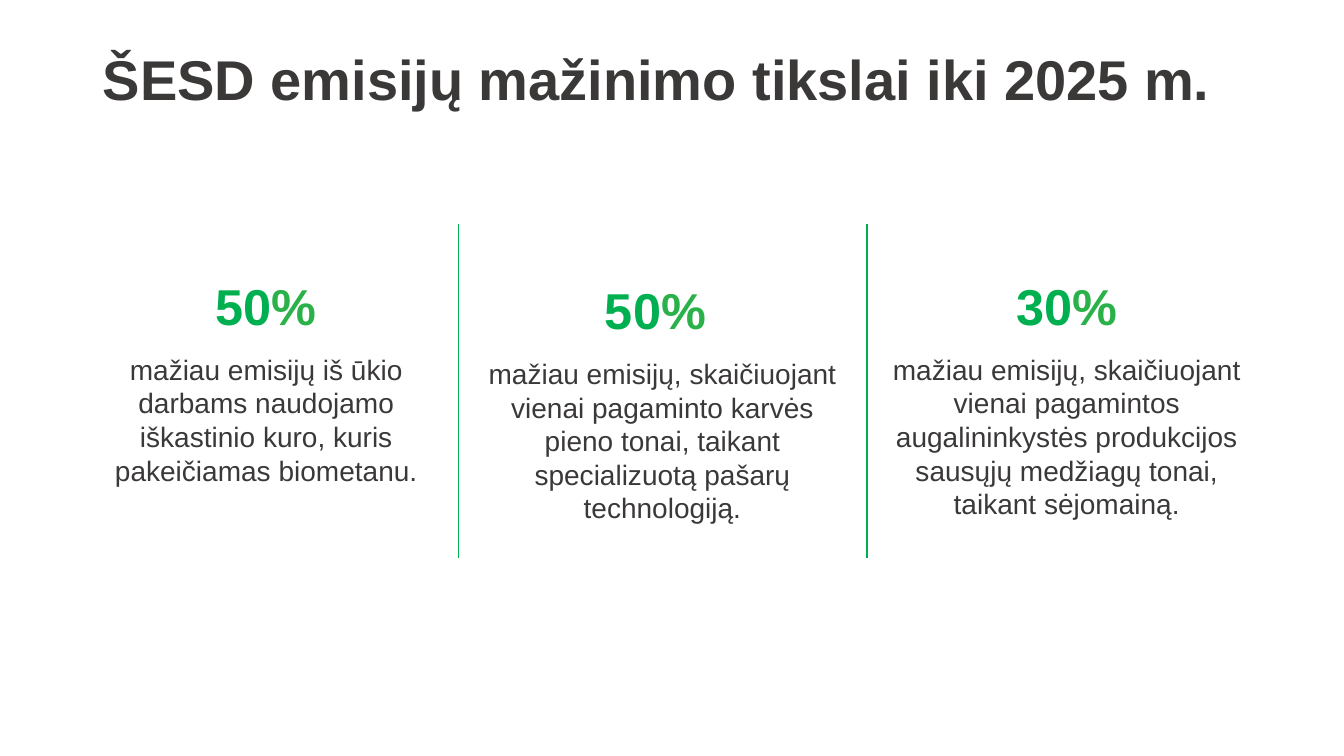
from lxml.etree import SubElement
from pptx import Presentation
from pptx.dml.color import RGBColor
from pptx.enum.shapes import MSO_CONNECTOR as Connector
from pptx.enum.text import MSO_ANCHOR as Anchor, MSO_AUTO_SIZE as AutoSize, PP_ALIGN as Align
from pptx.oxml.ns import qn
from pptx.util import Inches, Pt

WIDTH, HEIGHT = Inches(13.33), Inches(7.5)
INK, GREEN, PERCENT_GREEN = "3B3838", "00B050", "2BB14A"

# Left, top, width and height in percent of the slide, then figure, sign and text
GOALS = [
    ((5.78, 35.73, 28.06, 39.87), "50", "%",
     "mažiau emisijų iš ūkio darbams naudojamo iškastinio kuro, kuris pakeičiamas biometanu."),
    ((35.26, 36.27, 28.06, 38.4), "50", "% ",
     "mažiau emisijų, skaičiuojant vienai pagaminto karvės pieno tonai, "
     "taikant specializuotą pašarų technologiją."),
    ((64.52, 35.73, 29.71, 38.27), "30", "%",
     "mažiau emisijų, skaičiuojant vienai pagamintos augalininkystės produkcijos "
     "sausųjų medžiagų tonai, taikant sėjomainą."),
]
DIVIDERS = (34.13, 64.52)
DIVIDER_TOP, DIVIDER_BOTTOM = 29.6, 73.87


def across(percent):
    return round(WIDTH * percent / 100)


def down(percent):
    return round(HEIGHT * percent / 100)


def area(left, top, width, height):
    return across(left), down(top), across(width), down(height)


def color(hex_code):
    return RGBColor.from_string(hex_code)


def write(paragraph, text, size=20, fill=INK, bold=False):
    run = paragraph.add_run()
    run.text = text
    run.font.name = "Arial"
    run.font.size = Pt(size)
    run.font.bold = bold
    run.font.color.rgb = color(fill)


def add_title(slide, text):
    title = slide.shapes.title
    title.left, title.top, title.width, title.height = area(6.9, 6.27, 86.27, 16.4)
    frame = title.text_frame
    frame.auto_size = AutoSize.NONE
    frame.vertical_anchor = Anchor.TOP
    heading = frame.paragraphs[0]
    heading.alignment = Align.LEFT
    heading.line_spacing = 0.9
    write(heading, text, size=40, bold=True)


def add_goal(slide, place, figure, sign, description):
    frame = slide.shapes.add_textbox(*area(*place)).text_frame
    frame.word_wrap = True
    headline, details = frame.paragraphs[0], frame.add_paragraph()
    for paragraph in (headline, details):
        paragraph.alignment = Align.CENTER
        paragraph.space_after = Pt(12)
    write(headline, figure, size=36, fill=GREEN, bold=True)
    write(headline, sign, size=36, fill=PERCENT_GREEN, bold=True)
    write(details, description)


def add_divider(slide, position):
    divider = slide.shapes.add_connector(
        Connector.STRAIGHT, across(position), down(DIVIDER_TOP),
        across(position), down(DIVIDER_BOTTOM))
    divider.line.color.rgb = color(GREEN)
    divider.line.width = Pt(1)
    SubElement(divider._element.spPr, qn("a:effectLst"))


def main():
    deck = Presentation()
    deck.slide_width, deck.slide_height = WIDTH, HEIGHT
    slide = deck.slides.add_slide(deck.slide_layouts.get_by_name("Title Only"))

    # Heading
    add_title(slide, "ŠESD emisijų mažinimo tikslai iki 2025 m.")

    # Three goals with dividers between them
    for goal in GOALS:
        add_goal(slide, *goal)
    for position in DIVIDERS:
        add_divider(slide, position)

    deck.save("out.pptx")


if __name__ == "__main__":
    main()
